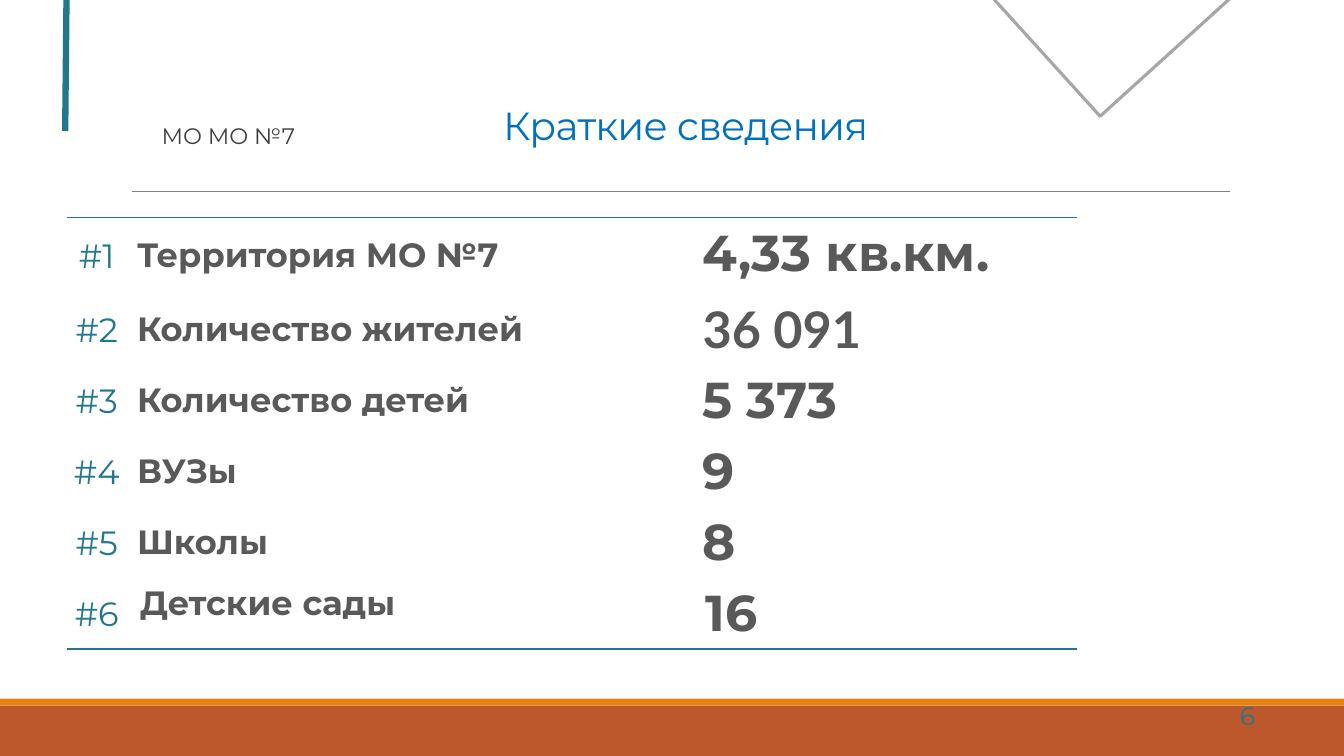
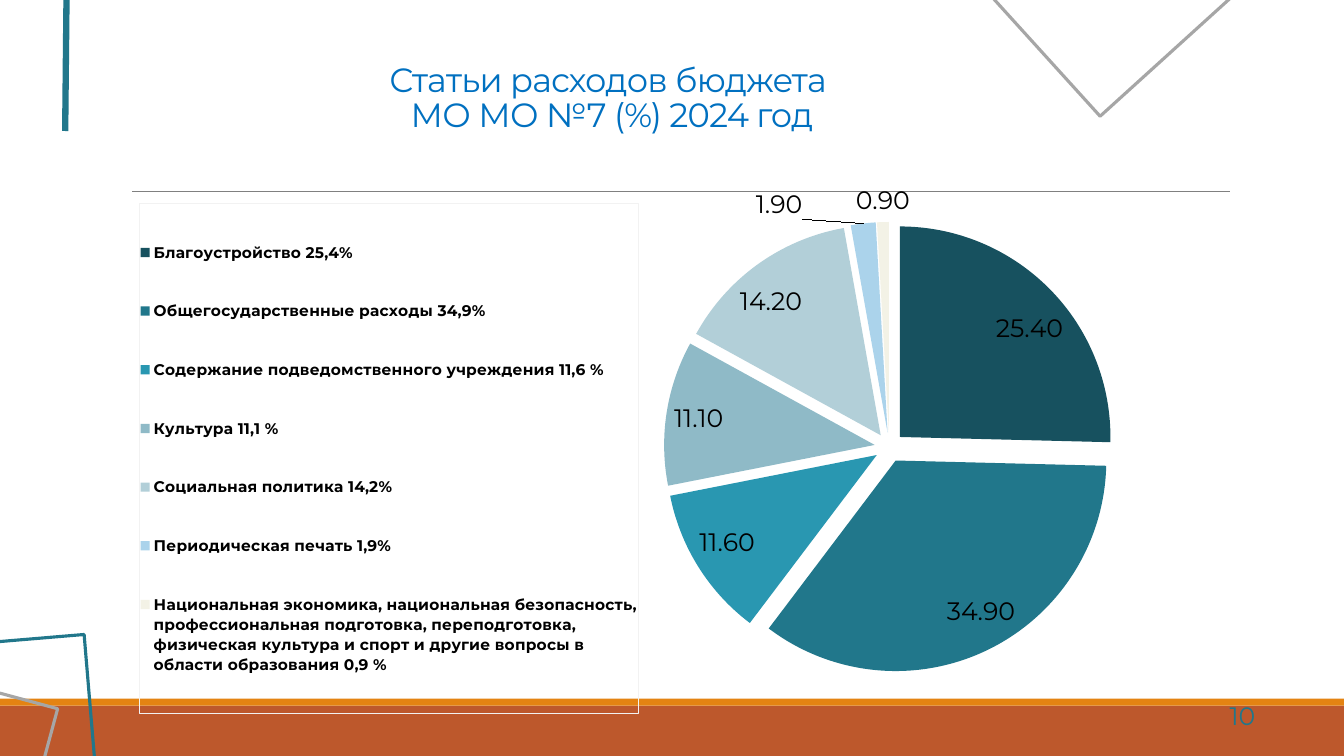
from dataclasses import dataclass

from lxml import etree
from pptx import Presentation, util as u
from pptx.chart.data import CategoryChartData
from pptx.dml.color import RGBColor
from pptx.enum import chart as charts, shapes, text
from pptx.oxml import parse_xml
from pptx.oxml.ns import nsdecls, qn


@dataclass(frozen=True)
class Theme:
    font: str = "Montserrat"
    figure_font: str = "Lato"
    plain_table: str = "{2D5ABB26-0587-4C30-8999-92F81FD0307C}"
    teal: str = "21778B"
    blue: str = "0070C0"
    gray: str = "A6A6A6"
    rule: str = "808080"
    body: str = "595959"
    note: str = "404040"
    black: str = "000000"
    frame: str = "F2F2F2"
    band: str = "BD582C"
    stripe: str = "E48312"
    slices: tuple = ("17515F", "21778B", "2997B1", "8FBAC7", "B2CFD8", "ABD3EB", "F3F2E6")
    title_size: int = 28
    long_title_size: int = 24
    figure_size: int = 36
    row_size: int = 24
    label_size: int = 18
    note_size: int = 16
    legend_size: int = 11


theme = Theme()
presentation = Presentation()
presentation.slide_width, presentation.slide_height = u.Inches(13.33), u.Inches(7.5)
COLUMN = presentation.slide_width / 100
ROW = presentation.slide_height / 100


def grid(left, top, width, height):
    """Turn percentages of the slide into lengths."""
    return [u.Emu(round(share * unit)) for share, unit in
            zip((left, top, width, height), (COLUMN, ROW, COLUMN, ROW))]


def write(frame, words, color, size, align=text.PP_ALIGN.LEFT, bold=False,
          font=theme.font, spacing=None):
    frame.text = words
    paragraph = frame.paragraphs[0]
    paragraph.alignment = align
    if spacing:
        paragraph.line_spacing = spacing
    for line_break in paragraph._p.findall(qn("a:br")):
        etree.SubElement(line_break, qn("a:rPr")).set("sz", str(size * 100))
    for run in paragraph.runs:
        values = {"name": font, "size": u.Pt(size), "bold": bold}
        for name, value in values.items():
            setattr(run.font, name, value)
        run.font.color.rgb = RGBColor.from_string(color)


bands = [((0, 93.33, 100, 6.67), theme.band), ((0, 92.4, 100, 0.93), theme.stripe)]
lines = [((9.83, 25.33, 91.55, 25.33), theme.rule, 0.5),
         ((4.95, 0, 4.85, 17.33), theme.teal, 4.5)]
top_square = ((75.82, -16.97, 14.1, 27.6), 47.8, theme.gray)
corner_squares = [((-8.33, 92.13, 11.93, 18.8), 285.1, theme.gray),
                  ((-12.75, 82.4, 18.08, 38.27), 265.2, theme.teal)]
pages = [
    ("Краткие сведения", (10.43, 5.6), theme.title_size, "6", [top_square]),
    ("Статьи расходов бюджета \vМО МО №7 (%) 2024 год", (4.95, 3.73),
     theme.long_title_size, "10", [top_square, *corner_squares]),
]

for heading, corner, size, number, squares in pages:
    slide = presentation.slides.add_slide(presentation.slide_layouts[5])

    for box, color in bands:
        shape = slide.shapes.add_shape(shapes.MSO_SHAPE.RECTANGLE, *grid(*box))
        shape.shadow.inherit = False
        shape.fill.solid()
        shape.fill.fore_color.rgb = RGBColor.from_string(color)
        shape.line.fill.background()

    for ends, color, width in lines:
        connector = slide.shapes.add_connector(shapes.MSO_CONNECTOR.STRAIGHT, *grid(*ends))
        connector.line.color.rgb = RGBColor.from_string(color)
        connector.line.width = u.Pt(width)
        etree.SubElement(connector._element.spPr, qn("a:effectLst"))

    for box, angle, color in squares:
        shape = slide.shapes.add_shape(shapes.MSO_SHAPE.RECTANGLE, *grid(*box))
        shape.shadow.inherit = False
        shape.rotation = angle
        shape.fill.background()
        shape.line.color.rgb = RGBColor.from_string(color)
        shape.line.width = u.Pt(2.25)

    title = slide.shapes.title
    title.left, title.top, title.width, title.height = grid(*corner, 81.17, 14.67)
    title.text_frame.auto_size = text.MSO_AUTO_SIZE.NONE
    title.text_frame.vertical_anchor = text.MSO_ANCHOR.BOTTOM
    write(title.text_frame, heading, theme.blue, size, text.PP_ALIGN.CENTER, spacing=0.85)
    for run in title.text_frame.paragraphs[0].runs:
        run.font._element.set("spc", "-50")

    page_number = slide.shapes.add_textbox(*grid(71.64, 92, 22.5, 5.33)).text_frame
    page_number.word_wrap = True
    page_number.vertical_anchor = text.MSO_ANCHOR.MIDDLE
    write(page_number, number, theme.teal, theme.label_size, text.PP_ALIGN.RIGHT)

facts_slide, budget_slide = presentation.slides

# Key facts
facts = [
    ("Территория МО №7", "4,33 кв.км."),
    ("Количество жителей", "36 091"),
    ("Количество детей", "5 373"),
    ("ВУЗы", "9"),
    ("Школы", "8"),
    ("Детские сады", "16"),
]
column_shares = (4.5, 42.08, 28.58)
row_shares = [10.08] + [9.4] * (len(facts) - 1)
table = facts_slide.shapes.add_table(
    len(facts), len(column_shares),
    *grid(4.95, 28.8, sum(column_shares), sum(row_shares))).table
table.first_row = table.horz_banding = False
table._tbl.tblPr.find(qn("a:tableStyleId")).text = theme.plain_table
for column, share in zip(table.columns, column_shares):
    column.width = u.Emu(round(share * COLUMN))
for row, share in zip(table.rows, row_shares):
    row.height = u.Emu(round(share * ROW))

last = len(facts) - 1
edges = {0: "lnT", last: "lnB"}
for index, (name, figure) in enumerate(facts):
    side = 0.13 if index == last else 0.1
    name_anchor = text.MSO_ANCHOR.TOP if index == last else text.MSO_ANCHOR.MIDDLE
    figure_font = theme.figure_font if figure == "36 091" else theme.font
    cells = [
        (f"#{index + 1}", theme.teal, theme.row_size, text.PP_ALIGN.CENTER, False,
         theme.font, text.MSO_ANCHOR.MIDDLE, (0.01, 0.01, 0.01, 0)),
        (name, theme.body, theme.row_size, text.PP_ALIGN.LEFT, True,
         theme.font, name_anchor, (side, 0.05, side, 0.05)),
        (figure, theme.body, theme.figure_size, text.PP_ALIGN.LEFT, True,
         figure_font, text.MSO_ANCHOR.TOP, (side, 0.05, side, 0.05)),
    ]
    for cell, (words, color, size, align, bold, font, anchor, margins) in zip(
            table.rows[index].cells, cells):
        write(cell.text_frame, words, color, size, align, bold, font)
        cell.vertical_anchor = anchor
        for edge, margin in zip(("left", "top", "right", "bottom"), margins):
            setattr(cell, f"margin_{edge}", u.Inches(margin))
        cell.fill.background()
        if index in edges:
            cell._tc.get_or_add_tcPr().insert(0, parse_xml(
                f'<a:{edges[index]} {nsdecls("a")} w="12700"><a:solidFill>'
                f'<a:srgbClr val="{theme.teal}"/></a:solidFill></a:{edges[index]}>'))

note = facts_slide.shapes.add_textbox(*grid(11.28, 10.8, 81.17, 14.67)).text_frame
note.word_wrap = True
note.vertical_anchor = text.MSO_ANCHOR.MIDDLE
write(note, "МО МО №7", theme.note, theme.note_size, spacing=0.9)

# Budget spending
spending = {
    "Благоустройство 25,4%": 25.4,
    "Общегосударственные расходы 34,9%": 34.9,
    "Содержание подведомственного учреждения 11,6 %": 11.6,
    "Культура 11,1 %": 11.1,
    "Социальная политика 14,2%": 14.2,
    "Периодическая печать 1,9%": 1.9,
    "Национальная экономика, национальная безопасность, профессиональная подготовка, "
    "переподготовка, физическая культура и спорт и другие вопросы в области "
    "образования 0,9 %": 0.9,
}
chart_data = CategoryChartData(number_format="#,##0.00")
chart_data.categories = list(spending)
chart_data.add_series("Series 1", list(spending.values()))
chart = budget_slide.shapes.add_chart(
    charts.XL_CHART_TYPE.PIE, *grid(9.75, 20.13, 78.54, 75.73), chart_data).chart
chart.has_title = False
chart.has_legend = True
chart.legend.position = charts.XL_LEGEND_POSITION.LEFT
chart.legend.include_in_layout = True
chart.plots[0].vary_by_categories = True
series = chart.plots[0].series[0]
for index, color in enumerate(theme.slices):
    fill = series.points[index].format.fill
    fill.solid()
    fill.fore_color.rgb = RGBColor.from_string(color)
series._element.find(qn("c:dPt")).addprevious(
    parse_xml(f'<c:explosion {nsdecls("c")} val="7"/>'))

labels = series.data_labels
for name, value in {"show_value": True, "number_format": "#,##0.00",
                    "number_format_is_linked": False}.items():
    setattr(labels, name, value)
press_label, economy_label = (series.points[index].data_label for index in (5, 6))
for font, size, bold in ((chart.font, theme.label_size, False),
                         (labels.font, theme.label_size, False),
                         (press_label.font, theme.label_size, False),
                         (economy_label.font, theme.label_size, False),
                         (chart.legend.font, theme.legend_size, True)):
    for name, value in {"name": theme.font, "size": u.Pt(size), "bold": bold}.items():
        setattr(font, name, value)
    font.color.rgb = RGBColor.from_string(theme.black)
economy_label.position = charts.XL_LABEL_POSITION.OUTSIDE_END


def layout(target, **values):
    """Build a manual chart layout; numbers are percentages of the chart."""
    parts = "".join(
        f'<c:{name} val="{value if isinstance(value, str) else value / 100}"/>'
        for name, value in values.items())
    old = target.find(qn("c:layout"))
    if old is not None:
        target.remove(old)
    new = parse_xml(f'<c:layout {nsdecls("c")}><c:manualLayout>{parts}'
                    '</c:manualLayout></c:layout>')
    target.insert(0, new)
    return new


layout(chart._chartSpace.chart.plotArea, layoutTarget="inner", xMode="edge",
       yMode="edge", x=50.5, y=12.2, w=42.7, h=78.7)
label_element = labels._element.find(qn("c:dLbl"))
label_element.find(qn("c:idx")).addnext(layout(label_element, x=-5.7, y=0.3))
legend = chart.legend._element
legend.find(qn("c:legendPos")).addnext(
    layout(legend, xMode="edge", yMode="edge", x=0.8, y=9, w=47.3, h=89))
legend.find(qn("c:txPr")).addprevious(parse_xml(
    f'<c:spPr {nsdecls("c", "a")}><a:ln w="6350"><a:solidFill>'
    f'<a:srgbClr val="{theme.frame}"/></a:solidFill></a:ln></c:spPr>'))

presentation.save("out.pptx")
